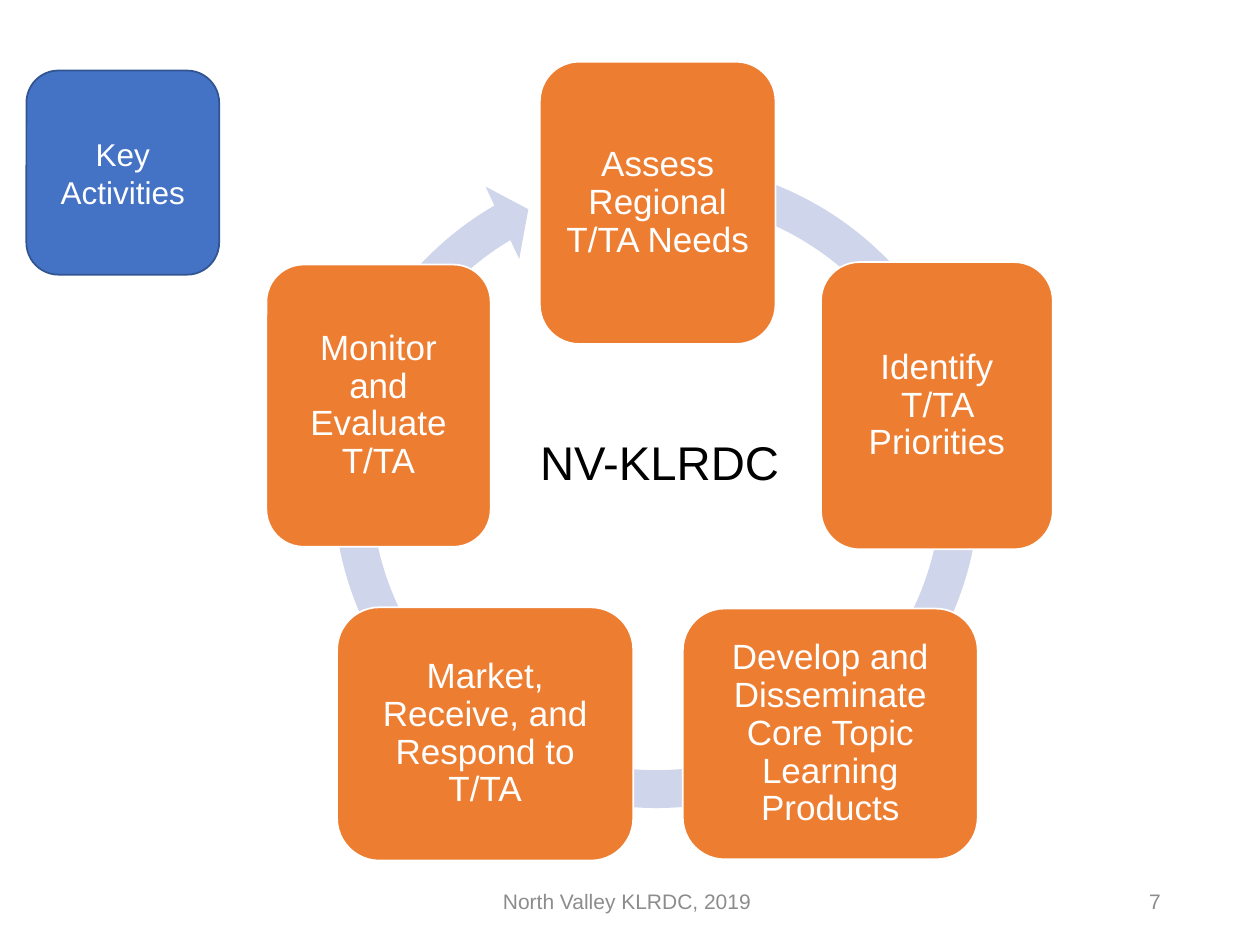
from math import cos, radians, sin

from pptx import Presentation
from pptx.dml.color import RGBColor
from pptx.enum.shapes import MSO_SHAPE
from pptx.enum.text import MSO_ANCHOR, PP_ALIGN
from pptx.util import Inches, Pt

# Content: activities clockwise from the top, with card width and height
ACTIVITIES = [
    ("Assess Regional T/TA Needs", 1.87, 2.24),
    ("Identify T/TA Priorities", 1.84, 2.28),
    ("Develop and Disseminate Core Topic Learning Products", 2.34, 1.99),
    ("Market, Receive, and Respond to T/TA", 2.35, 2.01),
    ("Monitor and Evaluate T/TA", 1.78, 2.24),
]
HEADING = "Key Activities"
HUB = "NV-KLRDC"
FOOTER = "North Valley KLRDC, 2019 "
PAGE = "7"

THEME = {
    "font": "Arial",
    "card": "ED7D31", "ring": "CFD5EA", "heading": "4472C4",
    "heading_line": "325491", "light": "FFFFFF", "dark": "000000",
    "muted": "8C8C8C",
    "card_size": 20, "hub_size": 27, "heading_size": 18, "footer_size": 12,
}

# Layout
WIDTH, HEIGHT = 10, 7.5
CYCLE_X, CYCLE_Y, RADIUS = 5.22, 3.94, 2.33
RING_BOX = (2.48, 1.12, 5.46, 5.46)
RING_ADJUSTMENTS = (0.055, 3.307, 143.749, 170.312, 0.058)
HUB_BOX = (4.04, 3.04, 2.39, 1.25)
HEADING_BOX = (0.21, 0.56, 1.53, 1.62)
FOOTER_Y, FOOTER_H = 6.95, 0.4


def rgb(name):
    return RGBColor.from_string(THEME[name])


def add_shape(s, kind, box, fill=None, line=None):
    sp = s.shapes.add_shape(kind, *map(Inches, box))
    sp.shadow.inherit = False
    if fill:
        sp.fill.solid()
        sp.fill.fore_color.rgb = rgb(fill)
    else:
        sp.fill.background()
    if line:
        sp.line.color.rgb = rgb(line)
        sp.line.width = Pt(1)
    else:
        sp.line.fill.background()
    return sp


def set_text(sp, text, size, color, align=PP_ALIGN.CENTER, spacing=1.0, inset=None):
    tf = sp.text_frame
    frame = {"word_wrap": True, "vertical_anchor": MSO_ANCHOR.MIDDLE}
    if inset is not None:
        for side in ("left", "right", "top", "bottom"):
            frame[f"margin_{side}"] = Inches(inset)
    p = tf.paragraphs[0]
    r = p.add_run()
    r.text = text
    formats = [
        (tf, frame),
        (p, {"alignment": align, "line_spacing": spacing}),
        (r.font, {"name": THEME["font"], "size": Pt(THEME[size])}),
    ]
    for target, values in formats:
        for name, value in values.items():
            setattr(target, name, value)
    r.font.color.rgb = rgb(color)


def add_cycle(s):
    # Ring behind the cards
    ring = add_shape(s, MSO_SHAPE.CIRCULAR_ARROW, RING_BOX, "ring")
    for i, value in enumerate(RING_ADJUSTMENTS):
        ring.adjustments[i] = value
    # Cards centred at equal angles around the ring
    for i, (text, w, h) in enumerate(ACTIVITIES):
        angle = radians(360 / len(ACTIVITIES) * i)
        x = CYCLE_X + RADIUS * sin(angle)
        y = CYCLE_Y - RADIUS * cos(angle)
        card = add_shape(s, MSO_SHAPE.ROUNDED_RECTANGLE,
                         (x - w / 2, y - h / 2, w, h), "card", "light")
        set_text(card, text, "card_size", "light", spacing=0.9, inset=0.08)
    # Label in the middle
    hub = add_shape(s, MSO_SHAPE.ROUNDED_RECTANGLE, HUB_BOX)
    set_text(hub, HUB, "hub_size", "dark")


def add_footer(s):
    for text, x, w, align in [(FOOTER, 3.31, 3.38, PP_ALIGN.CENTER),
                              (PAGE, 7.06, 2.25, PP_ALIGN.RIGHT)]:
        box = s.shapes.add_textbox(*map(Inches, (x, FOOTER_Y, w, FOOTER_H)))
        set_text(box, text, "footer_size", "muted", align)


def main():
    prs = Presentation()
    prs.slide_width, prs.slide_height = Inches(WIDTH), Inches(HEIGHT)
    s = prs.slides.add_slide(prs.slide_layouts[6])
    add_cycle(s)
    heading = add_shape(s, MSO_SHAPE.ROUNDED_RECTANGLE, HEADING_BOX,
                        "heading", "heading_line")
    set_text(heading, HEADING, "heading_size", "light")
    add_footer(s)
    prs.save("out.pptx")


if __name__ == "__main__":
    main()
